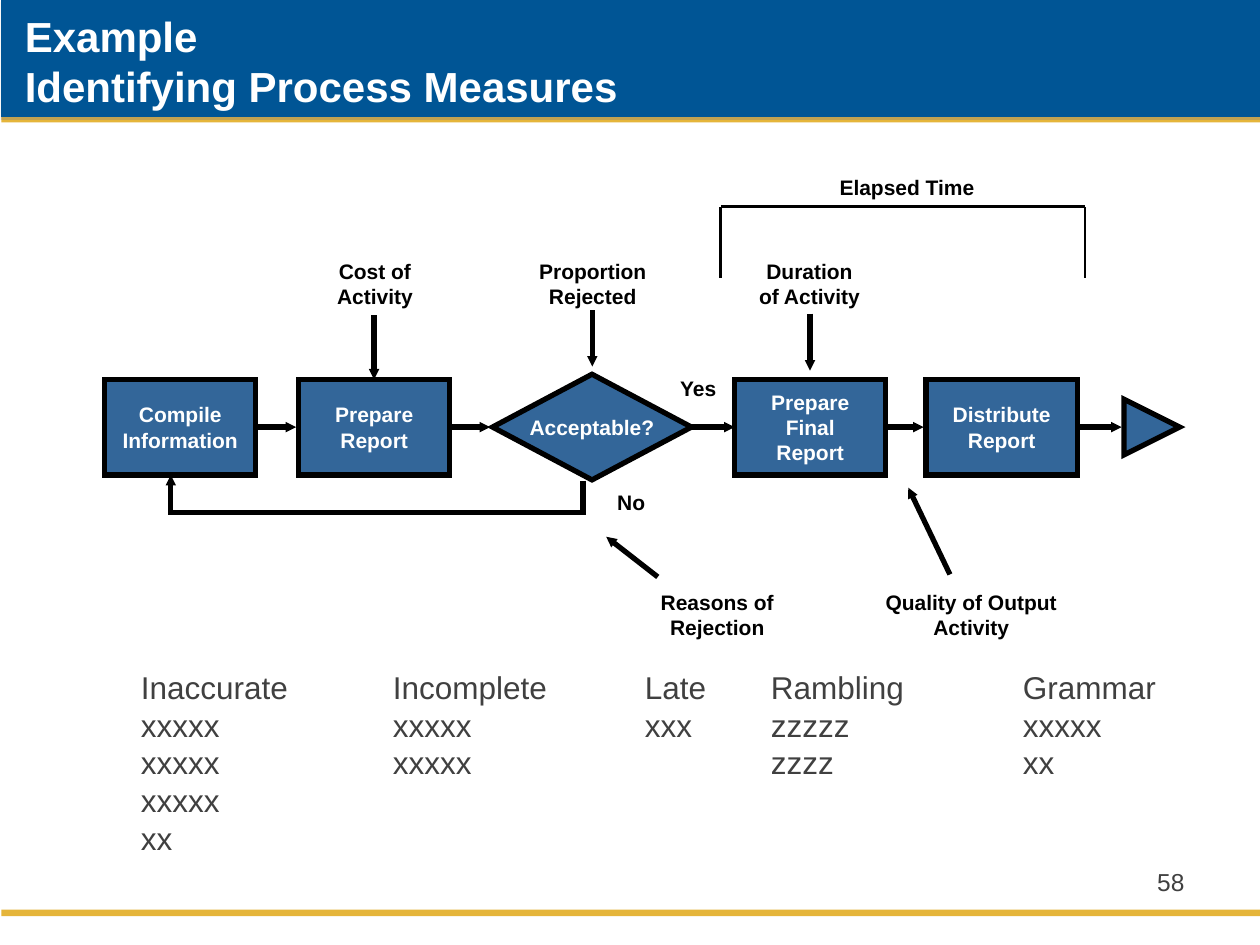
"""Build the process measures slide: a report flowchart with its measures and a tally."""
from typing import NamedTuple

from lxml import etree
from pptx import Presentation
from pptx import util as u
from pptx.dml.color import RGBColor
from pptx.enum import shapes, text
from pptx.oxml import ns

BLUE, GOLD, STEEL = "005595", "E5B53A", "336699"
WHITE, BLACK, GREY = "FFFFFF", "000000", "404040"
FLOW_Y = 8.61
TALLY_TABS = (5.08, 10.16, 12.7, 17.78)


class Bar(NamedTuple):
    top: float
    height: float
    color: str


class Node(NamedTuple):
    kind: shapes.MSO_SHAPE
    left: float
    width: float
    height: float
    label: str = ""
    rotation: float = 0
    wrap: bool = True


class Label(NamedTuple):
    left: float
    top: float
    width: float
    height: float
    content: str
    size: float = 12
    color: str = BLACK
    bold: bool = True
    align: text.PP_ALIGN = text.PP_ALIGN.CENTER
    tabs: tuple = ()


class Line(NamedTuple):
    x1: float
    y1: float
    x2: float
    y2: float
    weight: float = 3
    arrow: bool = True


TALLY = "\n".join([
    "Inaccurate\tIncomplete\tLate\tRambling\tGrammar",
    "xxxxx\txxxxx\txxx\tzzzzz\txxxxx",
    "xxxxx\txxxxx\t\tzzzz\txx",
    "xxxxx",
    "xx",
])
BARS = [Bar(18.34, 0.13, GOLD), Bar(2.34, 0.13, GOLD), Bar(0, 2.34, BLUE)]
BOX, DIAMOND = shapes.MSO_SHAPE.RECTANGLE, shapes.MSO_SHAPE.DIAMOND
NODES = [
    Node(BOX, 2.11, 3.05, 1.93, "Compile Information"),
    Node(BOX, 6.02, 3.05, 1.93, "Prepare\nReport"),
    Node(DIAMOND, 9.93, 4.01, 2.13, "Acceptable?", wrap=False),
    Node(BOX, 14.81, 3.05, 1.93, "Prepare\nFinal Report"),
    Node(BOX, 18.67, 3.05, 1.93, "Distribute\nReport"),
    Node(shapes.MSO_SHAPE.FLOWCHART_EXTRACT, 22.66, 1.12, 1.12, rotation=90),
]
LABELS = [
    Label(6.1, 5.08, 2.92, 1.27, "Cost of\nActivity"),
    Label(10.31, 5.08, 3.28, 1.27, "Proportion\nRejected"),
    Label(14.86, 5.08, 2.92, 1.27, "Duration\nof Activity"),
    Label(13.39, 7.44, 1.37, 0.76, "Yes"),
    Label(12.04, 9.75, 1.37, 0.76, "No"),
    Label(13, 11.76, 2.92, 1.27, "Reasons of Rejection"),
    Label(17.6, 11.76, 3.96, 1.27, "Quality of Output Activity"),
    Label(14.88, 3.4, 6.81, 0.76, "Elapsed Time"),
    Label(18.21, 17.35, 5.92, 1.32, "58", 14, GREY, False, text.PP_ALIGN.RIGHT),
    Label(2.59, 13.34, 21.18, 4.11, TALLY, 18, GREY, False, text.PP_ALIGN.LEFT, TALLY_TABS),
]
FLOW_SPANS = [(5.21, 5.97), (9.12, 9.88), (13.94, 14.81), (17.91, 18.62), (21.77, 22.61)]
LINES = [Line(start, FLOW_Y, end, FLOW_Y) for start, end in FLOW_SPANS] + [
    Line(7.54, 6.35, 7.54, 7.65),
    Line(11.94, 6.25, 11.94, 7.39),
    Line(16.33, 6.32, 16.33, 7.47),
    Line(13.26, 11.63, 12.22, 10.82),
    Line(19.15, 11.58, 18.31, 9.83),
    Line(14.53, 4.17, 14.53, 5.61, 1.5, False),
    Line(21.87, 4.17, 21.87, 5.61, 1.5, False),
    Line(14.53, 4.16, 21.87, 4.16, 1.5, False),
]


def rgb(value: str) -> RGBColor:
    return RGBColor.from_string(value)


def add_xml(parent, tag: str, **attributes):
    return etree.SubElement(parent, ns.qn(tag), attributes)


def write(shape, content: str, *, size: float, color: str, bold: bool = False,
          align=text.PP_ALIGN.LEFT, anchor=text.MSO_ANCHOR.TOP, wrap: bool = True,
          margin: float = 0.25, tabs: tuple = ()) -> None:
    frame = shape.text_frame
    frame.text = content
    frame.word_wrap = wrap
    frame.auto_size = text.MSO_AUTO_SIZE.NONE
    frame.vertical_anchor = anchor
    frame.margin_left = frame.margin_right = u.Cm(margin)
    for paragraph in frame.paragraphs:
        paragraph.alignment = align
        paragraph.space_before = u.Pt(0)
        if tabs:
            stops = add_xml(paragraph._p.get_or_add_pPr(), "a:tabLst")
            for position in tabs:
                add_xml(stops, "a:tab", pos=str(u.Cm(position)), algn="l")
        font = paragraph.font
        font.name, font.size, font.bold = "Arial", u.Pt(size), bold
        font.color.rgb = rgb(color)


def outline(shape, color: str, weight: float) -> None:
    shape.line.color.rgb = rgb(color)
    shape.line.width = u.Pt(weight)
    add_xml(shape.element.spPr.find(ns.qn("a:ln")), "a:miter", lim="800000")


def add_filled(slide, kind, left: float, top: float, width: float, height: float, color: str):
    shape = slide.shapes.add_shape(kind, u.Cm(left), u.Cm(top), u.Cm(width), u.Cm(height))
    shape.shadow.inherit = False
    shape.fill.solid()
    shape.fill.fore_color.rgb = rgb(color)
    return shape


def add_bar(slide, bar: Bar, depth: int) -> None:
    shape = add_filled(slide, BOX, 0.03, bar.top, 25.4, bar.height, bar.color)
    if bar.color == BLUE:
        outline(shape, BLUE, 0.75)
        effects = shape.element.spPr.find(ns.qn("a:effectLst"))
        shadow = add_xml(effects, "a:outerShdw", dist=str(u.Pt(1.8)), dir="5400000")
        tint = add_xml(shadow, "a:srgbClr", val="808080")
        add_xml(tint, "a:alpha", val="35000")
    else:
        shape.line.fill.background()
    slide.shapes.element.insert(depth, shape.element)


def add_node(slide, node: Node) -> None:
    top = FLOW_Y - node.height / 2
    shape = add_filled(slide, node.kind, node.left, top, node.width, node.height, STEEL)
    shape.rotation = node.rotation
    outline(shape, BLACK, 3)
    if node.label:
        write(shape, node.label, size=12, color=WHITE, bold=True, align=text.PP_ALIGN.CENTER,
              anchor=text.MSO_ANCHOR.MIDDLE, wrap=node.wrap, margin=0.3)


def add_label(slide, label: Label) -> None:
    shape = slide.shapes.add_textbox(
        u.Cm(label.left), u.Cm(label.top), u.Cm(label.width), u.Cm(label.height))
    write(shape, label.content, size=label.size, color=label.color,
          bold=label.bold, align=label.align, tabs=label.tabs)


def add_line(slide, line: Line, kind=shapes.MSO_CONNECTOR.STRAIGHT):
    connector = slide.shapes.add_connector(
        kind, u.Cm(line.x1), u.Cm(line.y1), u.Cm(line.x2), u.Cm(line.y2))
    outline(connector, BLACK, line.weight)
    properties = connector.element.spPr
    if line.arrow:
        add_xml(properties.find(ns.qn("a:ln")), "a:tailEnd", type="triangle", w="sm", len="sm")
    add_xml(properties, "a:effectLst")
    return connector


def add_return_path(slide) -> None:
    connector = add_line(slide, Line(7.66, 5.48, 7.54, 13.79), shapes.MSO_CONNECTOR.ELBOW)
    properties = connector.element.spPr
    properties.find(ns.qn("a:xfrm")).set("rot", "5400000")
    adjustments = properties.find(ns.qn("a:prstGeom")).find(ns.qn("a:avLst"))
    add_xml(adjustments, "a:gd", name="adj1", fmla="val -530000")


def main() -> None:
    presentation = Presentation()
    presentation.slide_width, presentation.slide_height = u.Cm(25.4), u.Cm(19.05)
    slide = presentation.slides.add_slide(presentation.slide_layouts[5])
    title = slide.shapes.title
    title.left, title.top, title.width, title.height = map(u.Cm, (0.25, -0.05, 20.12, 2.54))
    write(title, "Example\vIdentifying Process Measures", size=24, color=WHITE, bold=True,
          anchor=text.MSO_ANCHOR.MIDDLE)
    for depth, bar in enumerate(BARS, start=2):
        add_bar(slide, bar, depth)
    for node in NODES:
        add_node(slide, node)
    for line in LINES:
        add_line(slide, line)
    add_return_path(slide)
    for label in LABELS:
        add_label(slide, label)
    presentation.save("out.pptx")


if __name__ == "__main__":
    main()
